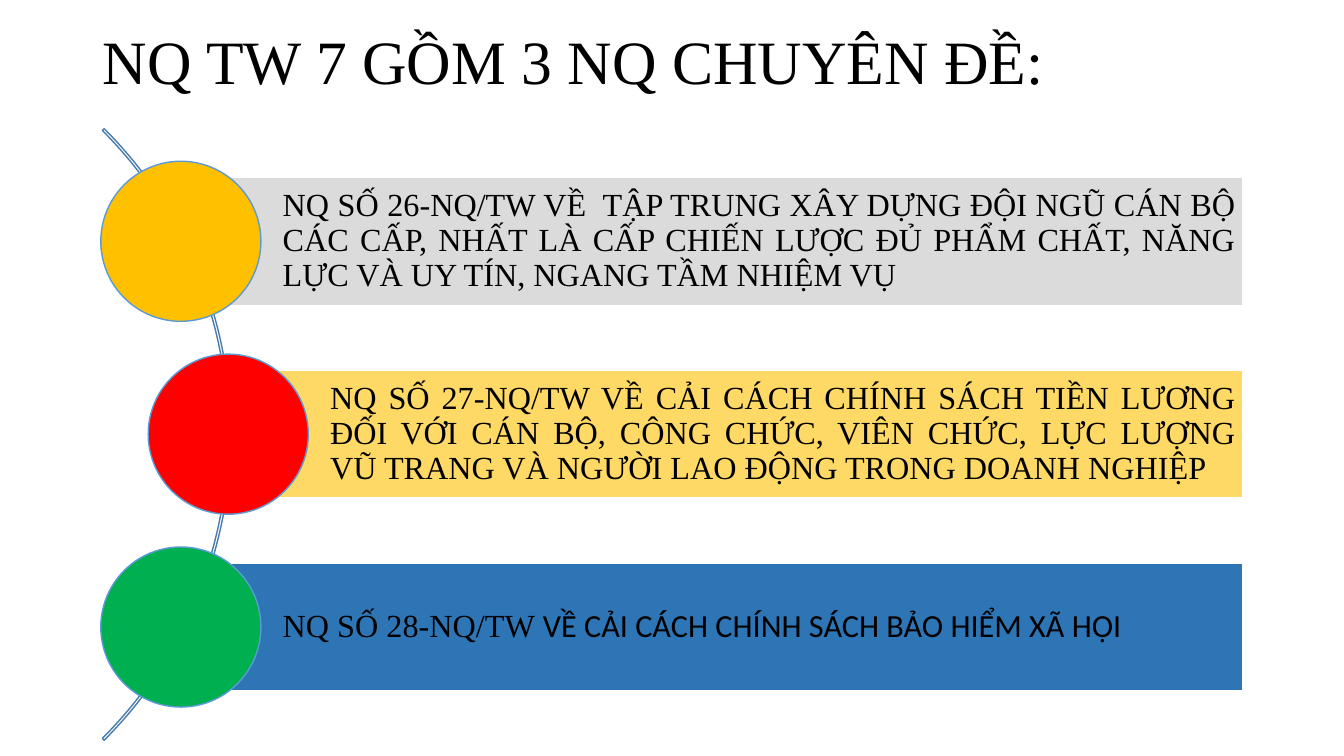
from pptx import Presentation, util as u
from pptx.dml.color import RGBColor
from pptx.enum import shapes, text

COLORS = {
    "ink": "000000", "white": "FFFFFF", "arc": "497CAB", "ring": "5B9BD5",
    "gray": "DBDBDB", "amber": "FFC000", "yellow": "FFD966",
    "red": "FF0000", "blue": "2E75B6", "green": "00B050",
}
SERIF, SANS = "Times New Roman", "Calibri"
RESOLUTIONS = [
    ("gray", "amber", 0, [("NQ SỐ 26-NQ/TW VỀ  TẬP TRUNG XÂY DỰNG ĐỘI NGŨ CÁN BỘ CÁC CẤP, "
                           "NHẤT LÀ CẤP CHIẾN LƯỢC ĐỦ PHẨM CHẤT, NĂNG LỰC VÀ UY TÍN, "
                           "NGANG TẦM NHIỆM VỤ", SERIF)]),
    ("yellow", "red", 0.47, [("NQ SỐ 27-NQ/TW VỀ CẢI CÁCH CHÍNH SÁCH TIỀN LƯƠNG ĐỐI VỚI CÁN BỘ, "
                              "CÔNG CHỨC, VIÊN CHỨC, LỰC LƯỢNG VŨ TRANG VÀ NGƯỜI LAO ĐỘNG "
                              "TRONG DOANH NGHIỆP", SERIF)]),
    ("blue", "green", 0, [("NQ SỐ 28-NQ/TW ", SERIF),
                          ("VỀ CẢI CÁCH CHÍNH SÁCH BẢO HIỂM XÃ HỘI", SANS)]),
]


def color(name):
    return RGBColor.from_string(COLORS[name])


def add_shape(slide, kind, box, fill, line):
    shape = slide.shapes.add_shape(kind, *map(u.Inches, box))
    shape.shadow.inherit = False
    if fill:
        shape.fill.solid()
        shape.fill.fore_color.rgb = color(fill)
    else:
        shape.fill.background()
    shape.line.color.rgb = color(line)
    shape.line.width = u.Pt(1)
    return shape


def write_text(frame, parts, size, alignment):
    frame.word_wrap = True
    frame.auto_size = text.MSO_AUTO_SIZE.NONE
    frame.vertical_anchor = text.MSO_ANCHOR.MIDDLE
    paragraph = frame.paragraphs[0]
    paragraph.alignment = alignment
    paragraph.line_spacing = 0.9
    for words, font_name in parts:
        run = paragraph.add_run()
        run.text = words
        run.font.name = font_name
        run.font.size = u.Pt(size)
        run.font.color.rgb = color("ink")


def place_title(slide, box):
    title = slide.shapes.title
    title.left, title.top, title.width, title.height = map(u.Inches, box)
    write_text(title.text_frame, [("NQ TW 7 GỒM 3 NQ CHUYÊN ĐỀ:", SERIF)], 44,
               text.PP_ALIGN.LEFT)


def add_arc(slide, box):
    arc = add_shape(slide, shapes.MSO_SHAPE.BLOCK_ARC, box, None, "arc")
    for index, value in enumerate((189, 27, 0.003)):
        arc.adjustments[index] = value


def add_resolution(slide, box, bar_color, circle_color, parts):
    left, top, width, diameter = box
    radius = diameter / 2
    bar_height = diameter * 0.8
    bar_box = (left + radius, top + (diameter - bar_height) / 2, width - radius, bar_height)
    bar = add_shape(slide, shapes.MSO_SHAPE.RECTANGLE, bar_box, bar_color, "white")
    frame = bar.text_frame
    frame.margin_left = u.Inches(1.01)
    frame.margin_right = frame.margin_top = frame.margin_bottom = u.Inches(0.06)
    write_text(frame, parts, 23, text.PP_ALIGN.JUSTIFY)
    circle_box = (left, top, diameter, diameter)
    add_shape(slide, shapes.MSO_SHAPE.OVAL, circle_box, circle_color, "ring")


def add_resolutions(slide, box):
    left, top, width, height = box
    pitch = height / len(RESOLUTIONS)
    diameter = pitch * 0.83
    for row, (bar_color, circle_color, indent, parts) in enumerate(RESOLUTIONS):
        row_box = (left + indent, top + row * pitch, width - indent, diameter)
        add_resolution(slide, row_box, bar_color, circle_color, parts)


def main():
    presentation = Presentation()
    presentation.slide_width = u.Inches(13.33)
    presentation.slide_height = u.Inches(7.5)
    slide = presentation.slides.add_slide(presentation.slide_layouts[5])
    place_title(slide, (0.92, 0, 11.5, 1.29))
    add_arc(slide, (-6.29, 0.02, 8.58, 8.58))
    add_resolutions(slide, (1, 1.6, 11.33, 5.74))
    presentation.save("out.pptx")


if __name__ == "__main__":
    main()
